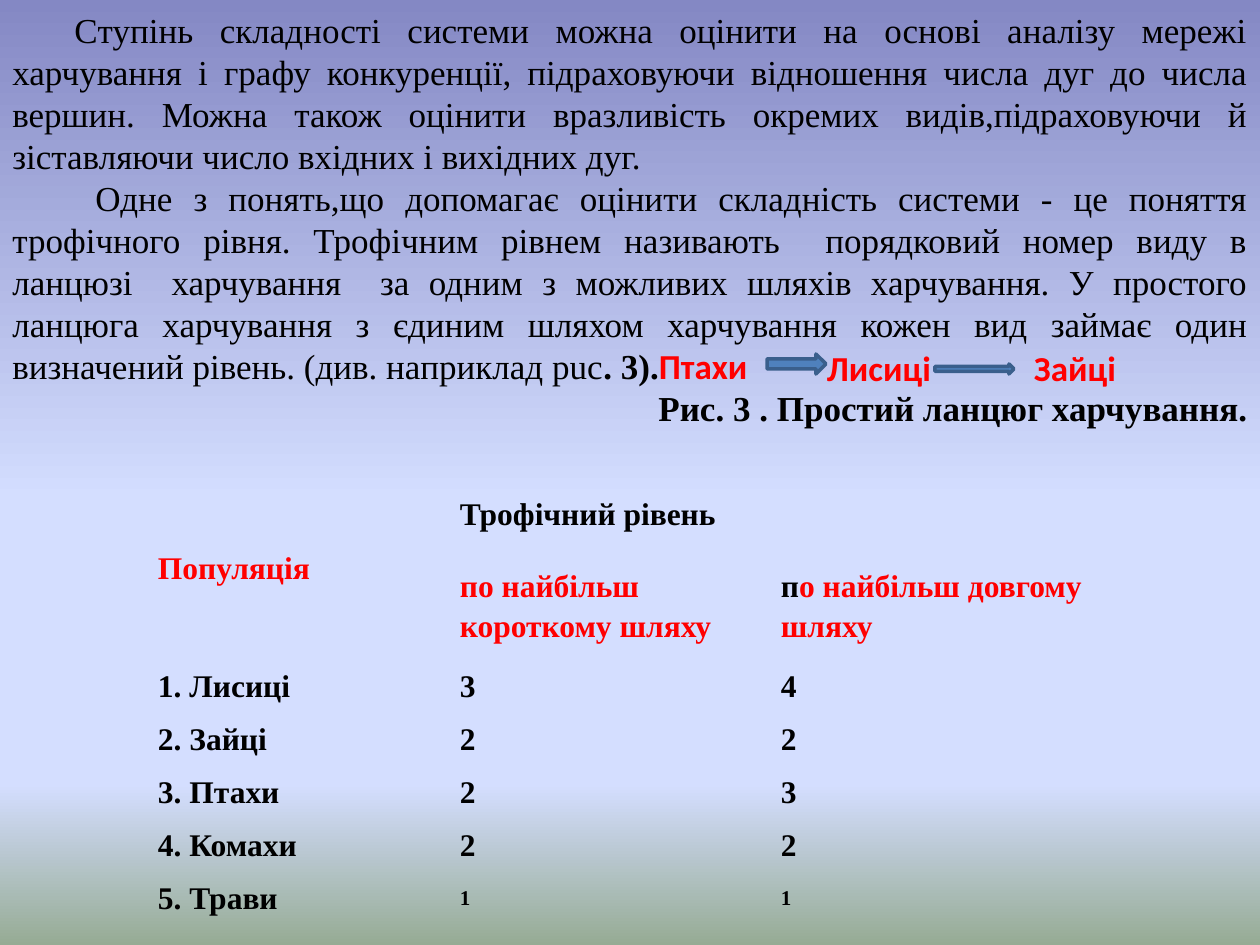
from lxml.etree import SubElement
from pptx import Presentation
from pptx.dml.color import RGBColor
from pptx.enum.shapes import MSO_SHAPE as Shape
from pptx.enum.text import MSO_ANCHOR as Anchor, PP_ALIGN as Align
from pptx.oxml.ns import qn
from pptx.util import Pt

PX = 914400 / 126
SERIF, SANS = "Times New Roman", "Calibri"
BLACK, RED = "000000", "FF0000"
NO_STYLE_NO_GRID = "{2D5ABB26-0587-4C30-8999-92F81FD0307C}"

SKY = [(0, "8488C4"), (53, "D4DEFF"), (83, "D4DEFF"), (100, "96AB94")]

COMPLEXITY = (
    "Cтупінь складності системи можна оцінити на основі аналізу мережі харчування "
    "і графу конкуренції, підраховуючи відношення числа дуг до числа вершин. Можна "
    "також оцінити вразливість окремих видів,підраховуючи й зіставляючи число "
    "вхідних і вихідних дуг."
)
TROPHIC_LEVEL = (
    " Одне з понять,що допомагає оцінити складність системи - це поняття трофічного "
    "рівня. Трофічним рівнем називають  порядковий номер виду в ланцюзі  харчування  "
    "за одним з можливих шляхів харчування. У простого ланцюга харчування з єдиним "
    "шляхом харчування кожен вид займає один визначений рівень. (див. нaпpиклaд puc"
)
CAPTION = "Pиc. 3 . Пpocтий ланцюг харчування."
CHAIN_START = "Птахи"
CHAIN_LINKS = [("Лиcицi", 827), ("Зайці", 1034)]
CHAIN_ARROWS = [(935, 364, 79, 10), (767, 354, 59, 20)]

COLUMNS = [302, 321, 321]
HEADER_ROWS = [117, 108]
SPECIES_ROW = 53
HEADER_DROP = 42
SPECIES = [
    ("1. Лисиці", "3", "4"),
    ("2. Зайці", "2", "2"),
    ("3. Птахи", "2", "3"),
    ("4. Комахи", "2", "2"),
    ("5. Трави", "1", "1"),
]


def px(length):
    return round(length * PX)


def rgb(value):
    return RGBColor.from_string(value)


def add_run(paragraph, text, size, color=BLACK, bold=False, face=SERIF):
    run = paragraph.add_run()
    run.text = text
    for name, value in {"size": Pt(size), "bold": bold, "name": face}.items():
        setattr(run.font, name, value)
    run.font.color.rgb = rgb(color)


def set_margins(holder, top=0):
    """Clear the margins of a cell or text frame, apart from the top one."""
    margins = {"margin_left": 0, "margin_right": 0, "margin_top": px(top), "margin_bottom": 0}
    for name, value in margins.items():
        setattr(holder, name, value)


def paint_background(slide):
    fill = slide.background.fill
    fill.gradient()
    fill.gradient_angle = 270
    stops = next(slide.element.iter(qn("a:gsLst")))
    for stop in list(stops):
        stops.remove(stop)
    for percent, color in SKY:
        stop = SubElement(stops, qn("a:gs"), pos=str(percent * 1000))
        SubElement(stop, qn("a:srgbClr"), val=color)


def indent_first_line(paragraph):
    properties = paragraph._p.get_or_add_pPr()
    properties.set("marL", "0")
    properties.set("indent", str(px(62)))


def add_explanation(slide):
    frame = slide.shapes.add_textbox(0, 0, px(1260), px(437)).text_frame
    frame.word_wrap = True
    frame.vertical_anchor = Anchor.MIDDLE
    complexity = frame.paragraphs[0]
    level, caption = frame.add_paragraph(), frame.add_paragraph()
    for paragraph, align in [
        (complexity, Align.JUSTIFY),
        (level, Align.JUSTIFY),
        (caption, Align.RIGHT),
    ]:
        paragraph.alignment = align
        indent_first_line(paragraph)
    add_run(complexity, COMPLEXITY, 20)
    add_run(level, TROPHIC_LEVEL, 20)
    add_run(level, ". 3).", 20, bold=True)
    add_run(level, CHAIN_START, 20, RED, True, SANS)
    add_run(caption, CAPTION, 20, bold=True)


def add_chain_link(slide, species, left):
    frame = slide.shapes.add_textbox(px(left), px(346), px(130), px(42)).text_frame
    frame.word_wrap = True
    set_margins(frame)
    add_run(frame.paragraphs[0], species, 20, RED, True, SANS)


def fill_cell(cell, *parts, size=18, drop=0):
    """Write (text, colour) parts; drop is the space kept free above them."""
    set_margins(cell, drop)
    cell.vertical_anchor = Anchor.MIDDLE
    paragraph = cell.text_frame.paragraphs[0]
    paragraph.line_spacing = 1.15
    for text, color in parts:
        add_run(paragraph, text, size, color, bold=True)


def add_level_table(slide):
    heights = HEADER_ROWS + [SPECIES_ROW] * len(SPECIES)
    frame = slide.shapes.add_table(
        len(heights), len(COLUMNS), px(158), px(433), px(sum(COLUMNS)), px(sum(heights))
    )
    table = frame.table
    table.first_row = table.horz_banding = False
    next(frame._element.iter(qn("a:tableStyleId"))).text = NO_STYLE_NO_GRID
    for column, width in zip(table.columns, COLUMNS):
        column.width = px(width)
    for row, height in zip(table.rows, heights):
        row.height = px(height)
    for cell in table.iter_cells():
        cell.fill.background()

    table.cell(0, 0).merge(table.cell(1, 0))
    table.cell(0, 1).merge(table.cell(0, 2))
    fill_cell(table.cell(0, 0), ("Популяція", RED), drop=HEADER_DROP)
    fill_cell(table.cell(0, 1), ("Трофічний рівень", BLACK), drop=HEADER_DROP)
    fill_cell(table.cell(1, 1), ("по найбільш короткому шляху", RED))
    fill_cell(table.cell(1, 2), ("п", BLACK), ("о найбільш довгому шляху", RED))
    for r, species in enumerate(SPECIES, len(HEADER_ROWS)):
        for c, text in enumerate(species):
            size = 12 if text == "1" else 18
            fill_cell(table.cell(r, c), (text, BLACK), size=size)


def add_chain_arrow(slide, left, top, width, height):
    arrow = slide.shapes.add_shape(
        Shape.RIGHT_ARROW, px(left), px(top), px(width), px(height)
    )
    arrow.shadow.inherit = False
    arrow.fill.solid()
    arrow.fill.fore_color.rgb = rgb("4F81BD")
    arrow.line.color.rgb = rgb("3A5F8C")
    arrow.line.width = Pt(2)


def main():
    deck = Presentation()
    deck.slide_width, deck.slide_height = px(1260), px(945)
    slide = deck.slides.add_slide(deck.slide_layouts[6])
    paint_background(slide)
    add_explanation(slide)
    for species, left in CHAIN_LINKS:
        add_chain_link(slide, species, left)
    add_level_table(slide)
    for box in CHAIN_ARROWS:
        add_chain_arrow(slide, *box)
    deck.save("out.pptx")


if __name__ == "__main__":
    main()
